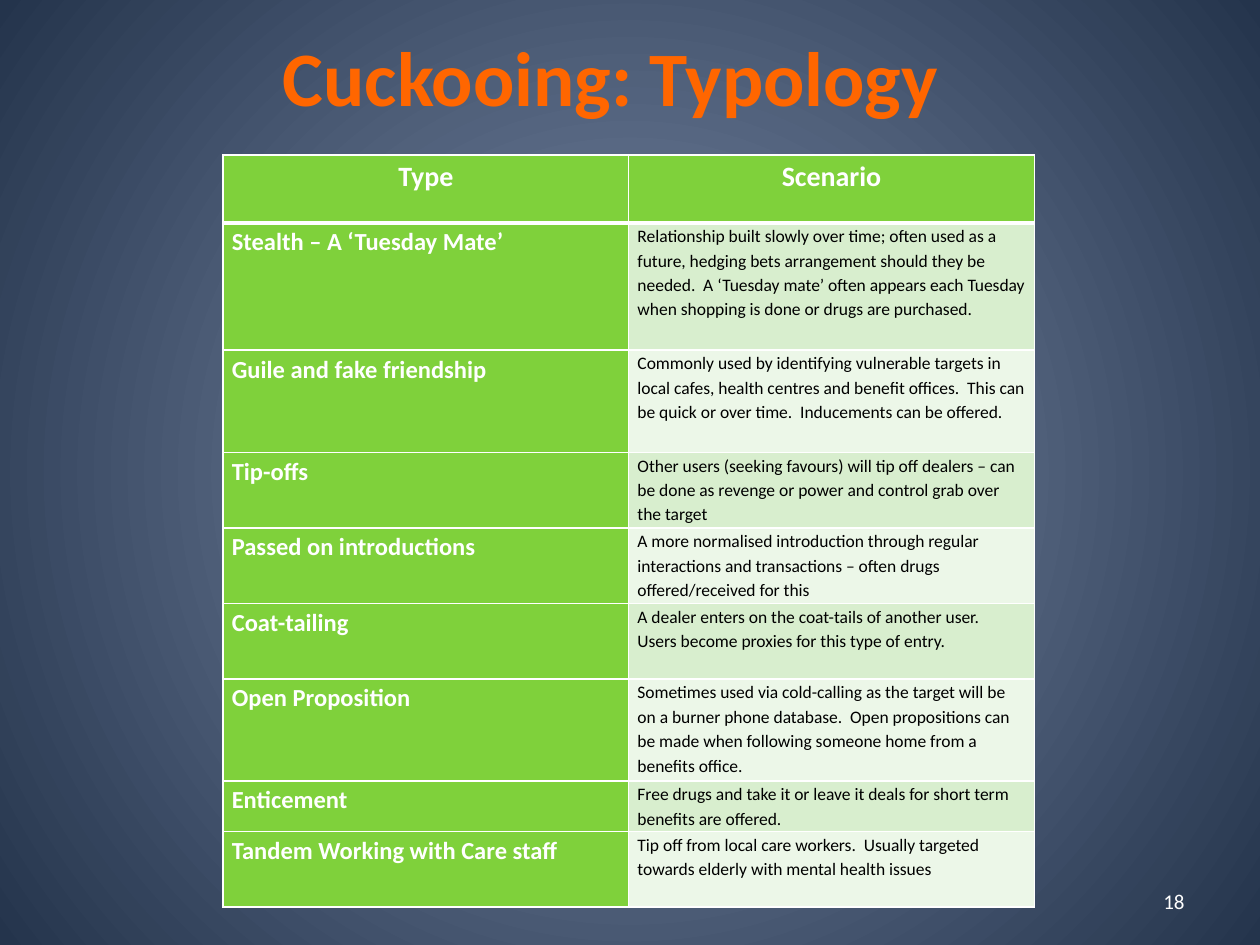
from pptx import Presentation
from pptx.dml.color import RGBColor
from pptx.enum import text
from pptx.oxml import ns, xmlchemy
from pptx.util import Inches, Pt

FONT = "Calibri"
COLORS = {
    "title": "FF6600", "light": "FFFFFF", "dark": "000000",
    "label": "7FD13B", "odd_band": "D8EECE", "even_band": "ECF7E8",
    "glow": "7D8DAA", "edge": "24344C",
}
HEADINGS = ("Type", "Scenario")
# type, scenario, row height in inches
TYPOLOGY = [
    ("Stealth – A ‘Tuesday Mate’",
     "Relationship built slowly over time; often used as a future, hedging bets "
     "arrangement should they be needed.  A ‘Tuesday mate’ often appears each "
     "Tuesday when shopping is done or drugs are purchased.", 1.01),
    ("Guile and fake friendship",
     "Commonly used by identifying vulnerable targets in local cafes, health "
     "centres and benefit offices.  This can be quick or over time.  "
     "Inducements can be offered.", 0.81),
    ("Tip-offs",
     "Other users (seeking favours) will tip off dealers – can be done as "
     "revenge or power and control grab over the target", 0.6),
    ("Passed on introductions",
     "A more normalised introduction through regular interactions and "
     "transactions – often drugs offered/received for this", 0.6),
    ("Coat-tailing",
     "A dealer enters on the coat-tails of another user.  Users become proxies "
     "for this type of entry.", 0.6),
    ("Open Proposition",
     "Sometimes used via cold-calling as the target will be on a burner phone "
     "database.  Open propositions can be made when following someone home "
     "from a benefits office.", 0.81),
    ("Enticement",
     "Free drugs and take it or leave it deals for short term benefits are "
     "offered.", 0.4),
    ("Tandem Working with Care staff",
     "Tip off from local care workers.  Usually targeted towards elderly with "
     "mental health issues", 0.6),
]


def rgb(name):
    return RGBColor.from_string(COLORS[name])


def write(frame, words, size, color, bold=False, align=text.PP_ALIGN.LEFT):
    frame.text = words
    frame.word_wrap = True
    paragraph = frame.paragraphs[0]
    paragraph.alignment = align
    font = paragraph.runs[0].font
    font.name, font.size, font.bold = FONT, Pt(size), bold
    font.color.rgb = rgb(color)
    return paragraph


def add_background(slide):
    """Radial gradient, light in the centre."""
    fill = slide.background.fill
    fill.gradient()
    for stop, color in zip(fill.gradient_stops, ("glow", "edge")):
        stop.color.rgb = rgb(color)
    gradient = slide.background._cSld.find(".//" + ns.qn("a:gradFill"))
    gradient.remove(gradient.find(ns.qn("a:lin")))
    radial = xmlchemy.OxmlElement("a:path")
    radial.set("path", "circle")
    center = xmlchemy.OxmlElement("a:fillToRect")
    for side in "ltrb":
        center.set(side, "50000")
    radial.append(center)
    gradient.find(ns.qn("a:gsLst")).addnext(radial)


def add_label(slide, box, words, size, color, bold, align, right_inset=0.1):
    frame = slide.shapes.add_textbox(*map(Inches, box)).text_frame
    frame.vertical_anchor = text.MSO_ANCHOR.MIDDLE
    frame.margin_right = Inches(right_inset)
    write(frame, words, size, color, bold, align)


def set_borders(cell, top, bottom):
    """Light borders; top and bottom are widths in points."""
    properties = cell._tc.get_or_add_tcPr()
    for side, width in (("L", 1), ("R", 1), ("T", top), ("B", bottom)):
        line = xmlchemy.OxmlElement("a:ln" + side)
        line.set("w", str(Pt(width)))
        solid = xmlchemy.OxmlElement("a:solidFill")
        color = xmlchemy.OxmlElement("a:srgbClr")
        color.set("val", COLORS["light"])
        solid.append(color)
        line.append(solid)
        properties.append(line)


def style_cell(cell, words, size, color, fill, bold, align, top=1, bottom=1):
    cell.margin_left = cell.margin_right = Inches(0.07)
    cell.margin_top = cell.margin_bottom = 0
    set_borders(cell, top, bottom)
    cell.fill.solid()
    cell.fill.fore_color.rgb = rgb(fill)
    write(cell.text_frame, words, size, color, bold, align).line_spacing = 1.15


def add_typology_table(slide, box, header_height):
    left, top, width, height = map(Inches, box)
    table = slide.shapes.add_table(
        len(TYPOLOGY) + 1, len(HEADINGS), left, top, width, height).table
    table.horz_banding = False
    table.rows[0].height = Inches(header_height)
    for column, heading in enumerate(HEADINGS):
        table.columns[column].width = width // len(HEADINGS)
        style_cell(table.cell(0, column), heading, 16, "light", "label", True,
                   text.PP_ALIGN.CENTER, bottom=3)
    for row, (kind, scenario, row_height) in enumerate(TYPOLOGY, start=1):
        table.rows[row].height = Inches(row_height)
        rule = 3 if row == 1 else 1
        band = "odd_band" if row % 2 else "even_band"
        style_cell(table.cell(row, 0), kind, 14, "light", "label", True,
                   text.PP_ALIGN.LEFT, top=rule)
        style_cell(table.cell(row, 1), scenario, 10, "dark", band, False,
                   text.PP_ALIGN.LEFT, top=rule)


def main():
    deck = Presentation()
    deck.slide_width, deck.slide_height = Inches(10), Inches(7.5)
    slide = deck.slides.add_slide(deck.slide_layouts[6])
    add_background(slide)
    add_label(slide, (0.5, 0.13, 9, 0.94), "Cuckooing: Typology", 44, "title",
              True, text.PP_ALIGN.CENTER, right_inset=0.4)
    add_typology_table(slide, (1.77, 1.23, 6.44, 5.98), header_height=0.54)
    add_label(slide, (7.17, 6.95, 2.33, 0.4), "18", 12, "light",
              False, text.PP_ALIGN.RIGHT)
    deck.save("out.pptx")


if __name__ == "__main__":
    main()
